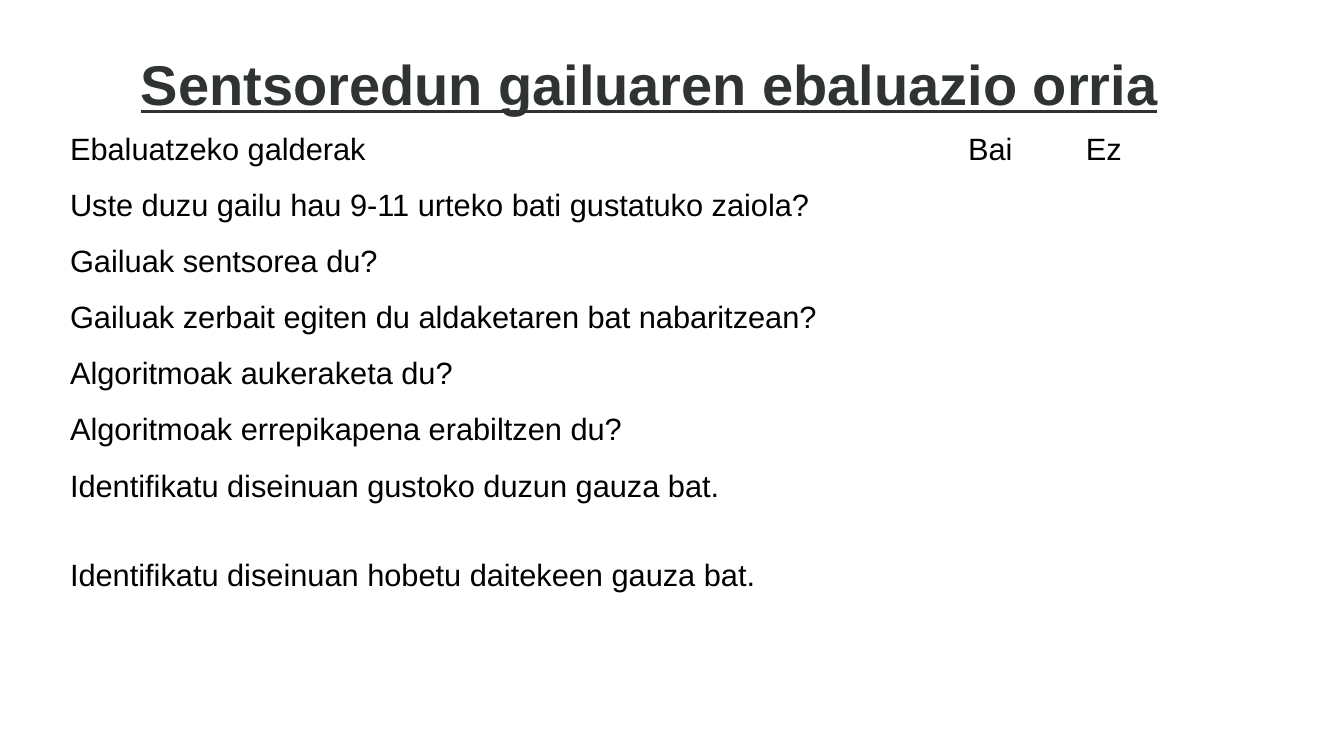
from dataclasses import dataclass

from pptx import Presentation
from pptx.dml.color import RGBColor
from pptx.enum.text import MSO_ANCHOR, PP_ALIGN
from pptx.util import Pt

CENTER, LEFT = PP_ALIGN.CENTER, PP_ALIGN.LEFT
TOP = MSO_ANCHOR.TOP
BLANK_LAYOUT = 6


@dataclass(frozen=True)
class Theme:
    font: str = "Arial"
    title_size: int = 40
    body_size: int = 22
    title_color: RGBColor = RGBColor(0x30, 0x33, 0x33)
    body_color: RGBColor = RGBColor(0, 0, 0)
    cell_margin: float = 6.85
    row_height: int = 39
    comment_row_height: int = 64


THEME = Theme()
COLUMN_WIDTHS = (202.3, 439.2, 84.2, 84.2)
TITLE = "Sentsoredun gailuaren ebaluazio orria"
HEADER = ("Ebaluatzeko galderak", "Bai", "Ez")
QUESTIONS = (
    "Uste duzu gailu hau 9-11 urteko bati gustatuko zaiola?",
    "Gailuak sentsorea du?",
    "Gailuak zerbait egiten du aldaketaren bat nabaritzean?",
    "Algoritmoak aukeraketa du?",
    "Algoritmoak errepikapena erabiltzen du?",
)
COMMENTS = (
    "Identifikatu diseinuan gustoko duzun gauza bat.",
    "Identifikatu diseinuan hobetu daitekeen gauza bat.",
)


def write_text(frame, text, size=THEME.body_size, color=THEME.body_color,
               align=LEFT, line_spacing=1.0, bold=False, underline=False):
    paragraph = frame.paragraphs[0]
    paragraph.alignment = align
    paragraph.line_spacing = line_spacing
    run = paragraph.add_run()
    run.text = text
    run.font.name = THEME.font
    run.font.size = Pt(size)
    run.font.color.rgb = color
    run.font.bold = bold
    run.font.underline = underline


def add_title(slide, left, top, width, height):
    frame = slide.shapes.add_textbox(Pt(left), Pt(top), Pt(width), Pt(height)).text_frame
    frame.word_wrap = True
    frame.vertical_anchor = TOP
    frame.margin_left = frame.margin_right = frame.margin_top = frame.margin_bottom = 0
    write_text(frame, TITLE, size=THEME.title_size, color=THEME.title_color,
               align=CENTER, line_spacing=1.07, bold=True, underline=True)


def add_evaluation_table(slide, left, top):
    """Yes/no questions keep two answer cells; comment rows span the table."""
    heights = ([THEME.row_height] * (1 + len(QUESTIONS))
               + [THEME.comment_row_height] * len(COMMENTS))
    table = slide.shapes.add_table(
        len(heights), len(COLUMN_WIDTHS), Pt(left), Pt(top),
        Pt(sum(COLUMN_WIDTHS)), Pt(sum(heights))).table
    table.first_row = table.horz_banding = False
    for column, width in zip(table.columns, COLUMN_WIDTHS):
        column.width = Pt(width)
    for row, height in zip(table.rows, heights):
        row.height = Pt(height)
    for cell in table.iter_cells():
        cell.fill.background()
        cell.vertical_anchor = TOP
        cell.margin_left = cell.margin_right = Pt(THEME.cell_margin)
        cell.margin_top = cell.margin_bottom = Pt(THEME.cell_margin)

    for index, text in enumerate((HEADER[0], *QUESTIONS, *COMMENTS)):
        last_column = 3 if text in COMMENTS else 1
        table.cell(index, 0).merge(table.cell(index, last_column))
        write_text(table.cell(index, 0).text_frame, text)
    for column, answer in enumerate(HEADER[1:], start=2):
        write_text(table.cell(0, column).text_frame, answer)


def main():
    presentation = Presentation()
    presentation.slide_width, presentation.slide_height = Pt(960), Pt(540)
    slide = presentation.slides.add_slide(presentation.slide_layouts[BLANK_LAYOUT])
    add_title(slide, left=64.8, top=32, width=798, height=44)
    add_evaluation_table(slide, left=43.2, top=87.8)
    presentation.save("out.pptx")


if __name__ == "__main__":
    main()
